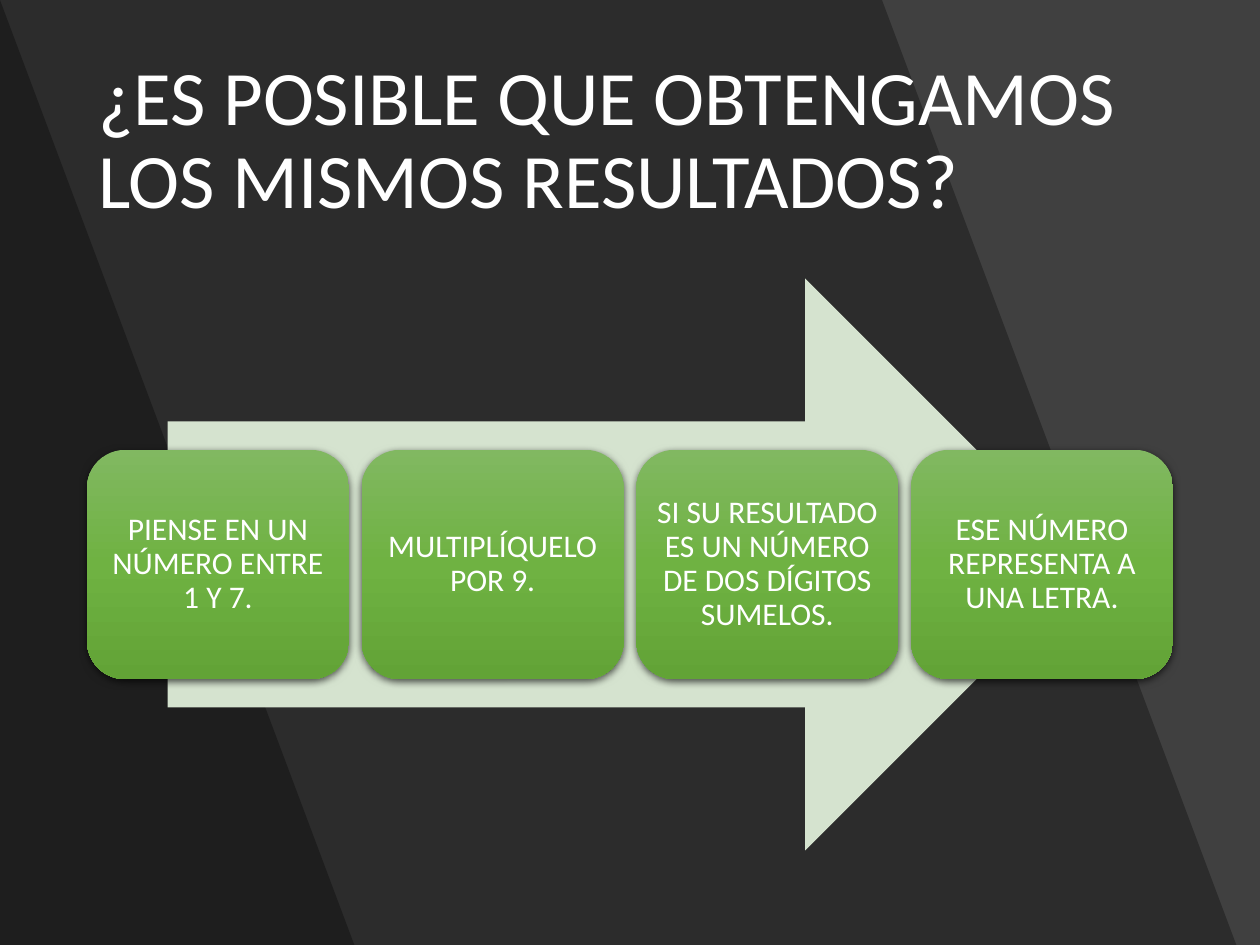
"""Build a slide with four steps of a number trick laid over an arrow."""
from copy import deepcopy

from lxml.etree import SubElement
from pptx import Presentation
from pptx.dml.color import RGBColor
from pptx.enum.shapes import MSO_SHAPE
from pptx.enum.text import MSO_ANCHOR, PP_ALIGN
from pptx.oxml.ns import qn
from pptx.util import Inches, Pt

BACKGROUND = RGBColor(0x40, 0x40, 0x40)
BLACK = RGBColor(0x00, 0x00, 0x00)
WHITE = RGBColor(0xFF, 0xFF, 0xFF)
PALE_GREEN = RGBColor(0xD5, 0xE3, 0xCF)
STEP_GREENS = [
    (0, RGBColor(0x81, 0xB8, 0x61)),
    (0.5, RGBColor(0x6F, 0xB2, 0x42)),
    (1, RGBColor(0x62, 0xA3, 0x36)),
]
STEPS = [
    "PIENSE EN UN NÚMERO ENTRE 1 Y 7.",
    "MULTIPLÍQUELO POR 9.",
    "SI SU RESULTADO ES UN NÚMERO DE DOS DÍGITOS SUMELOS.",
    "ESE NÚMERO REPRESENTA A UNA LETRA.",
]


def write(shape, text, size, align=PP_ALIGN.LEFT, inset=None):
    frame = shape.text_frame
    frame.word_wrap = True
    frame.vertical_anchor = MSO_ANCHOR.MIDDLE
    if inset is not None:
        frame.margin_left = frame.margin_right = inset
        frame.margin_top = frame.margin_bottom = inset
    paragraph = frame.paragraphs[0]
    paragraph.text = text
    paragraph.alignment = align
    paragraph.line_spacing = 0.9
    paragraph.font.size = Pt(size)
    paragraph.font.name = "Calibri"
    paragraph.font.color.rgb = WHITE


presentation = Presentation()
presentation.slide_width = Inches(10)
presentation.slide_height = Inches(7.5)
slide = presentation.slides.add_slide(presentation.slide_layouts[6])
slide.background.fill.solid()
slide.background.fill.fore_color.rgb = BACKGROUND

for top_edge, bottom_edge in [(7.06, 9.67), (0.33, 2.94)]:
    outline = slide.shapes.build_freeform(0, 0, scale=Inches(1))
    outline.add_line_segments([(top_edge, 0), (bottom_edge, 7.5), (0, 7.5)])
    shade = outline.convert_to_shape()
    shade.shadow.inherit = False
    shade.line.fill.background()
    shade.fill.solid()
    shade.fill.fore_color.rgb = BLACK
    shade_color = shade.fill._xPr.find(qn("a:solidFill"))[0]
    SubElement(shade_color, qn("a:alpha"), val="30000")

title = slide.shapes.add_textbox(Inches(0.68), Inches(0.4), Inches(8.63), Inches(1.45))
write(title, "¿ES POSIBLE QUE OBTENGAMOS LOS MISMOS RESULTADOS?", size=44)

arrow = slide.shapes.add_shape(
    MSO_SHAPE.RIGHT_ARROW, Inches(1.33), Inches(2.21), Inches(7.33), Inches(4.54))
arrow.shadow.inherit = False
arrow.line.fill.background()
arrow.fill.solid()
arrow.fill.fore_color.rgb = PALE_GREEN

for index, step_text in enumerate(STEPS):
    step = slide.shapes.add_shape(
        MSO_SHAPE.ROUNDED_RECTANGLE,
        Inches(0.69 + 2.18 * index), Inches(3.57), Inches(2.08), Inches(1.82))
    step.line.fill.background()
    step.fill.gradient()
    step.fill.gradient_angle = 270
    properties = step.element.spPr
    stop_list = properties.find(qn("a:gradFill")).find(qn("a:gsLst"))
    stop_list.append(deepcopy(stop_list[0]))
    for stop, (position, green) in zip(step.fill.gradient_stops, STEP_GREENS):
        stop.position = position
        stop.color.rgb = green

    step.shadow.inherit = False
    shadow = SubElement(
        properties.find(qn("a:effectLst")), qn("a:outerShdw"),
        blurRad=str(Pt(4.5)), dist=str(Pt(1.5)), dir="5400000", rotWithShape="0")
    shadow_color = SubElement(shadow, qn("a:srgbClr"), val=str(BLACK))
    SubElement(shadow_color, qn("a:alpha"), val="63000")
    write(step, step_text, size=18, align=PP_ALIGN.CENTER, inset=Inches(0.07))

presentation.save("out.pptx")
